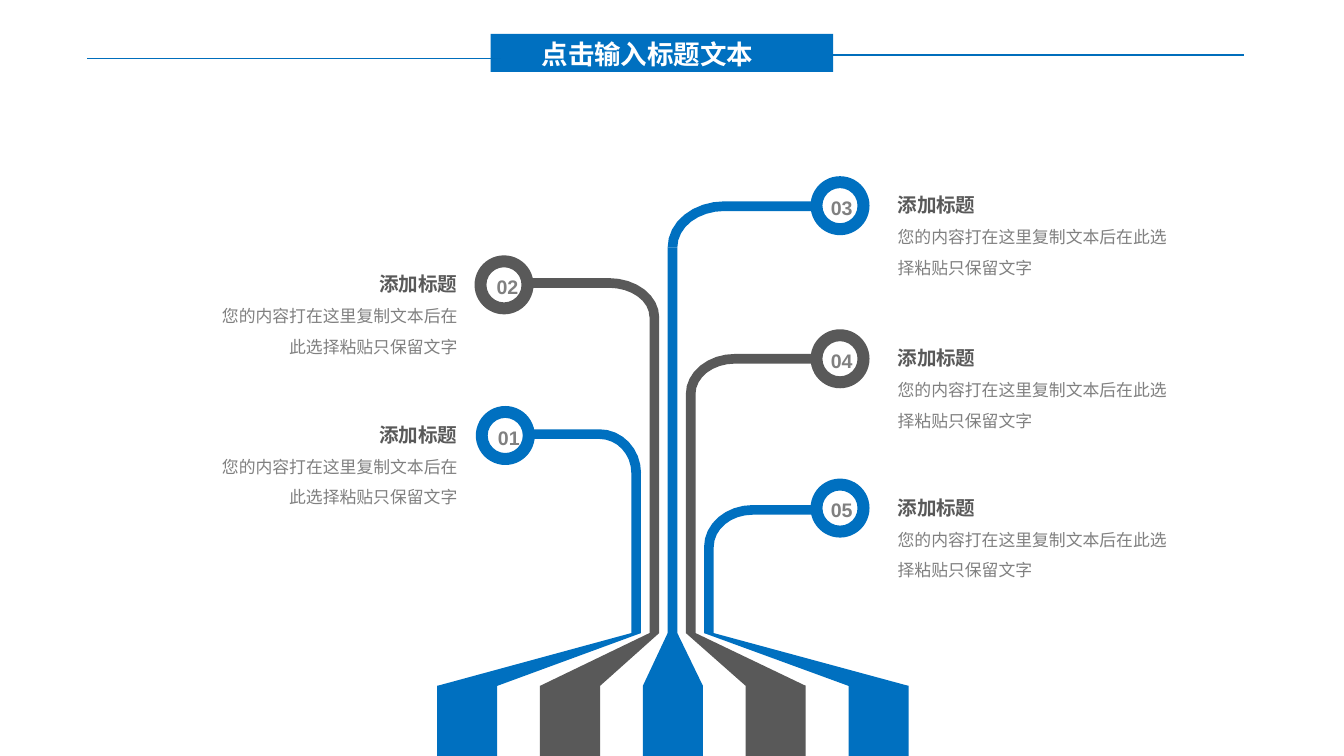
"""Build a slide with five branching pipes, each leading to a numbered caption."""
from math import cos, pi, sin

from lxml.etree import SubElement
from pptx import Presentation
from pptx.dml.color import RGBColor
from pptx.enum.shapes import MSO_CONNECTOR as Connector, MSO_SHAPE as Shape
from pptx.enum.text import MSO_ANCHOR as Anchor, MSO_AUTO_SIZE as AutoSize, PP_ALIGN as Align
from pptx.oxml.ns import qn
from pptx.util import Pt

COLORS = {"blue": "0070C0", "gray": "595959", "body": "808080", "line": "006EBC", "white": "FFFFFF"}
CJK = "Noto Sans CJK SC"
HEADING = "添加标题"
BODY = "您的内容打在这里复制文本后在此选择粘贴只保留文字"


def add_text(para, text, font=CJK, size=10.5, color="gray", bold=True, align=Align.LEFT, spacing=1.0):
    para.alignment = align
    para.line_spacing = spacing
    span = para.add_run()
    span.text = text
    span.font.name = font
    span.font.size = Pt(size)
    span.font.bold = bold
    span.font.color.rgb = RGBColor.from_string(COLORS[color])
    SubElement(span.font._element, qn("a:ea")).set("typeface", font)


def add_outline(page, points):
    first, *others = [(Pt(x), Pt(y)) for x, y in points]
    builder = page.shapes.build_freeform(*first, scale=1.0)
    builder.add_line_segments(others, close=True)
    return builder.convert_to_shape()


deck = Presentation()
deck.slide_width, deck.slide_height = Pt(720), Pt(405)
page = deck.slides.add_slide(deck.slide_layouts[5])

HALF, RADIUS, HOLE = 2.6, 15.8, 9.4
FAN_TOP, FOOT_TOP, FOOT_WIDTH = 339.2, 367.5, 32.2
STEPS = 8
pipes = [
    ("01", "blue", 270.7, 233.3, 232.6, 321.1, 253.4),
    ("02", "gray", 270, 152.6, 151.6, 326.2, 169.9),
    ("03", "blue", 450, 110.2, 110.5, 388.1, 132.5),
    ("04", "gray", 450, 192.2, 192.2, 393.8, 211),
    ("05", "blue", 450, 272.2, 273.2, 403.2, 293),
]

for index, (number, color, ring_x, ring_y, arm_y, bend_x, bend_y) in enumerate(pipes):
    stem_x = 360.3 + 9.75 * (index - 2)
    foot_x = 234.2 + 55.1 * index
    side = 1 if ring_x > stem_x else -1

    fan = add_outline(page, [(stem_x - HALF, FAN_TOP), (stem_x + HALF, FAN_TOP),
                             (foot_x + FOOT_WIDTH, FOOT_TOP), (foot_x, FOOT_TOP)])
    foot = page.shapes.add_shape(Shape.RECTANGLE, Pt(foot_x), Pt(FOOT_TOP),
                                 Pt(FOOT_WIDTH), Pt(405 - FOOT_TOP))
    stem = page.shapes.add_shape(Shape.RECTANGLE, Pt(stem_x - HALF), Pt(bend_y),
                                 Pt(2 * HALF), Pt(FAN_TOP - bend_y))

    edges = []
    for offset in (HALF, -HALF):
        reach_x, reach_y = abs(bend_x - stem_x) + offset, bend_y - arm_y + offset
        angles = [pi / 2 * step / STEPS for step in range(STEPS + 1)]
        edges.append([(bend_x - side * reach_x * cos(a), bend_y - reach_y * sin(a)) for a in angles])
    arm_end = ring_x - side * (RADIUS - 1)
    arm = add_outline(page, [*edges[0], (arm_end, arm_y - HALF), (arm_end, arm_y + HALF), *edges[1][::-1]])

    ring = page.shapes.add_shape(Shape.DONUT, Pt(ring_x - RADIUS), Pt(ring_y - RADIUS),
                                 Pt(2 * RADIUS), Pt(2 * RADIUS))
    ring.adjustments[0] = (RADIUS - HOLE) / (2 * RADIUS)

    for part in (fan, foot, stem, arm, ring):
        part.shadow.inherit = False
        part.fill.solid()
        part.fill.fore_color.rgb = RGBColor.from_string(COLORS[color])
        part.line.fill.background()

    left, width, align = (473.8, 160.6, Align.LEFT) if side > 0 else (110.2, 141.8, Align.RIGHT)
    caption = page.shapes.add_textbox(Pt(left), Pt(ring_y - 16.5), Pt(width), Pt(59))
    caption.text_frame.word_wrap = True
    caption.text_frame.auto_size = AutoSize.SHAPE_TO_FIT_TEXT
    add_text(caption.text_frame.paragraphs[0], HEADING, align=align, spacing=1.5)
    add_text(caption.text_frame.add_paragraph(), BODY, size=9, color="body", bold=False,
             align=align, spacing=1.5)

    label = page.shapes.add_textbox(Pt(ring_x - (12 if side > 0 else 11)), Pt(ring_y - 8.9),
                                    Pt(26.6), Pt(20.2))
    label.text_frame.word_wrap = False
    label.text_frame.auto_size = AutoSize.SHAPE_TO_FIT_TEXT
    add_text(label.text_frame.paragraphs[0], number, font="Arial", color="body")

banner = page.shapes.add_shape(Shape.RECTANGLE, Pt(262.8), Pt(18.2), Pt(183.6), Pt(20.4))
banner.shadow.inherit = False
banner.fill.solid()
banner.fill.fore_color.rgb = RGBColor.from_string(COLORS["blue"])
banner.line.fill.background()

title = page.shapes.title
title.left, title.top, title.width, title.height = Pt(283), Pt(16.6), Pt(133.9), Pt(24.5)
title.text_frame.word_wrap = True
title.text_frame.auto_size = AutoSize.NONE
title.text_frame.vertical_anchor = Anchor.TOP
add_text(title.text_frame.paragraphs[0], "点击输入标题文本", size=14.2, color="white")
banner.element.addnext(title.element)

for start, end, height in ((46.8, 268.6, 31.4), (445, 666.7, 29.5)):
    rule = page.shapes.add_connector(Connector.STRAIGHT, Pt(start), Pt(height), Pt(end), Pt(height))
    rule.line.color.rgb = RGBColor.from_string(COLORS["line"])
    rule.line.width = Pt(0.75)
    SubElement(rule.element.spPr, qn("a:effectLst"))

deck.save("out.pptx")
